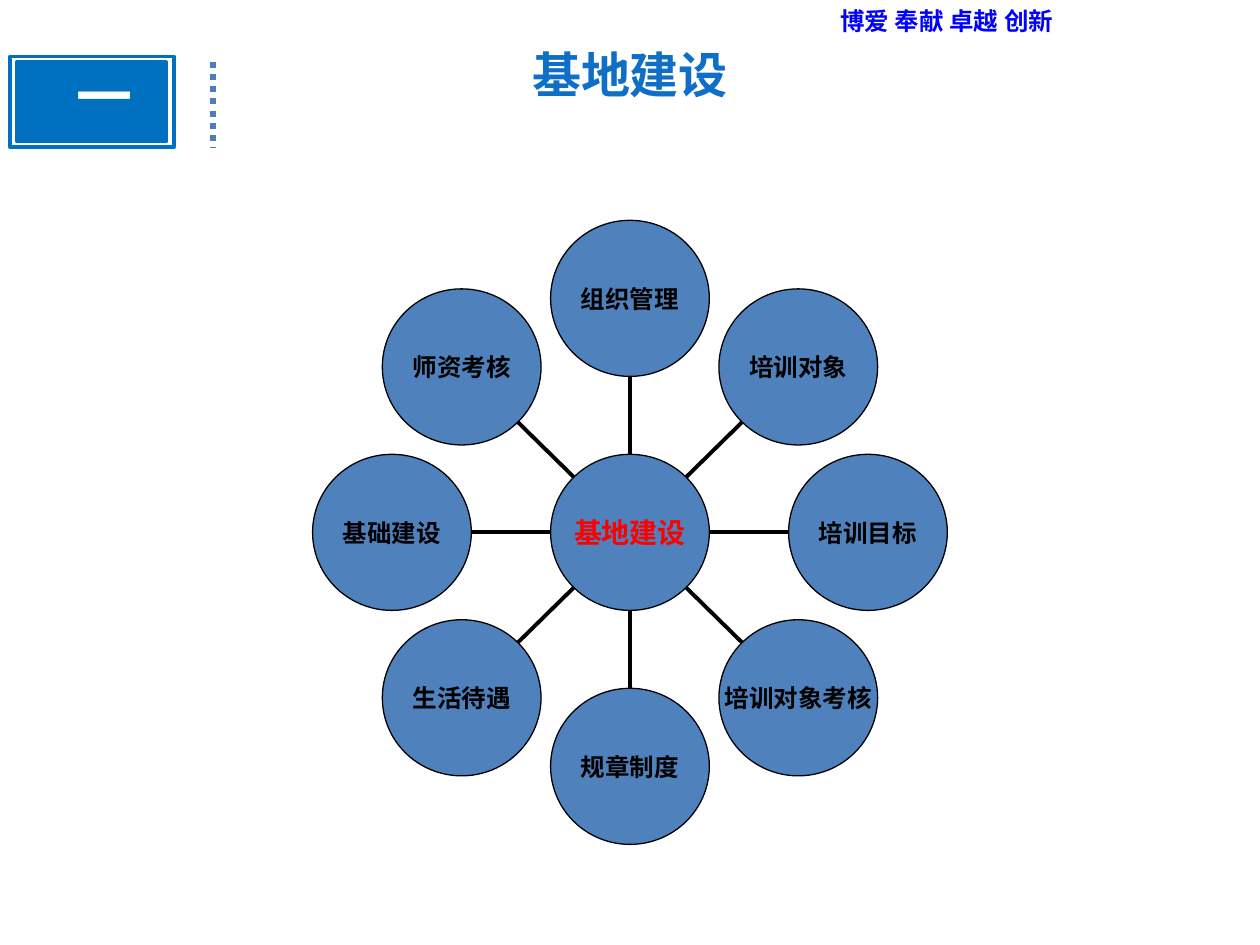
from math import cos, sin, radians
from pptx import Presentation
from pptx.dml.color import RGBColor
from pptx.enum.dml import MSO_LINE
from pptx.enum.shapes import MSO_CONNECTOR, MSO_SHAPE
from pptx.enum.text import MSO_ANCHOR, PP_ALIGN
from pptx.oxml.ns import qn
from pptx.util import Pt
from lxml import etree

COLORS = {"white": "FFFFFF", "badge": "0070C0", "divider": "4B7EBC", "motto": "0000FF",
          "title": "0F6FC6", "node": "4F81BD", "black": "000000", "hub": "FF0000"}
C = {name: RGBColor.from_string(value) for name, value in COLORS.items()}

prs = Presentation()
prs.slide_width, prs.slide_height = Pt(720), Pt(540)
s = prs.slides.add_slide(prs.slide_layouts[6])


def add_shape(kind, x, y, w, h, fill, line, width):
    sp = s.shapes.add_shape(kind, Pt(x), Pt(y), Pt(w), Pt(h))
    sp.shadow.inherit = False
    sp.fill.solid()
    sp.fill.fore_color.rgb = C[fill]
    sp.line.color.rgb = C[line]
    sp.line.width = Pt(width)
    return sp


def add_line(x1, y1, x2, y2, color, width):
    ln = s.shapes.add_connector(MSO_CONNECTOR.STRAIGHT, Pt(x1), Pt(y1), Pt(x2), Pt(y2))
    ln.line.color.rgb = C[color]
    ln.line.width = Pt(width)
    etree.SubElement(ln._element.spPr, qn("a:effectLst"))
    return ln


add_shape(MSO_SHAPE.RECTANGLE, 5.76, 32.2, 93.6, 52, "white", "badge", 2)
add_shape(MSO_SHAPE.RECTANGLE, 9.4, 35.3, 85.7, 45.4, "badge", "badge", 2)
divider = add_line(121.7, 35.3, 121.7, 84.2, "divider", 3.5)
divider.line.dash_style = MSO_LINE.ROUND_DOT

texts = [
    ("博爱 奉献 卓越 创新", 473, 0, 247, 28.8, 14, "Calibri", "motto", PP_ALIGN.JUSTIFY),
    ("基地建设", 36, 21.6, 648, 90, 28, "Calibri", "title", PP_ALIGN.CENTER),
    ("一", 36.7, 31.7, 46.8, 45.4, 32, "Noto Sans CJK SC", "white", PP_ALIGN.LEFT),
]
for text, x, y, w, h, size, font, color, align in texts:
    tf = s.shapes.add_textbox(Pt(x), Pt(y), Pt(w), Pt(h)).text_frame
    tf.word_wrap = True
    p = tf.paragraphs[0]
    p.text, p.alignment = text, align
    p.font.size, p.font.name, p.font.bold = Pt(size), font, True
    p.font.color.rgb = C[color]

CX, CY = 360, 304.2
RX, RY = 136, 133.7
W, H = 90.7, 89.2
labels = ["组织管理", "培训对象", "培训目标", "培训对象考核",
          "规章制度", "生活待遇", "基础建设", "师资考核"]
roboto = {"组织管理", "基础建设", "师资考核"}
nodes = [("基地建设", CX, CY, 16, "Arial", "hub")]
for i, label in enumerate(labels):
    angle = radians(360 / len(labels) * i - 90)
    dx, dy = RX * cos(angle), RY * sin(angle)
    add_line(CX + dx / 3, CY + dy / 3, CX + dx * 2 / 3, CY + dy * 2 / 3, "black", 2.25)
    nodes.append((label, CX + dx, CY + dy, 14, "Roboto" if label in roboto else "Arial", "black"))

for label, x, y, size, font, color in nodes:
    sp = add_shape(MSO_SHAPE.OVAL, x - W / 2, y - H / 2, W, H, "node", "black", 0.75)
    tf = sp.text_frame
    tf.margin_left = tf.margin_right = tf.margin_top = tf.margin_bottom = 0
    tf.word_wrap = False
    tf.vertical_anchor = MSO_ANCHOR.MIDDLE
    p = tf.paragraphs[0]
    p.text, p.alignment = label, PP_ALIGN.CENTER
    p.font.size, p.font.name, p.font.bold = Pt(size), font, True
    p.font.color.rgb = C[color]

prs.save("out.pptx")
